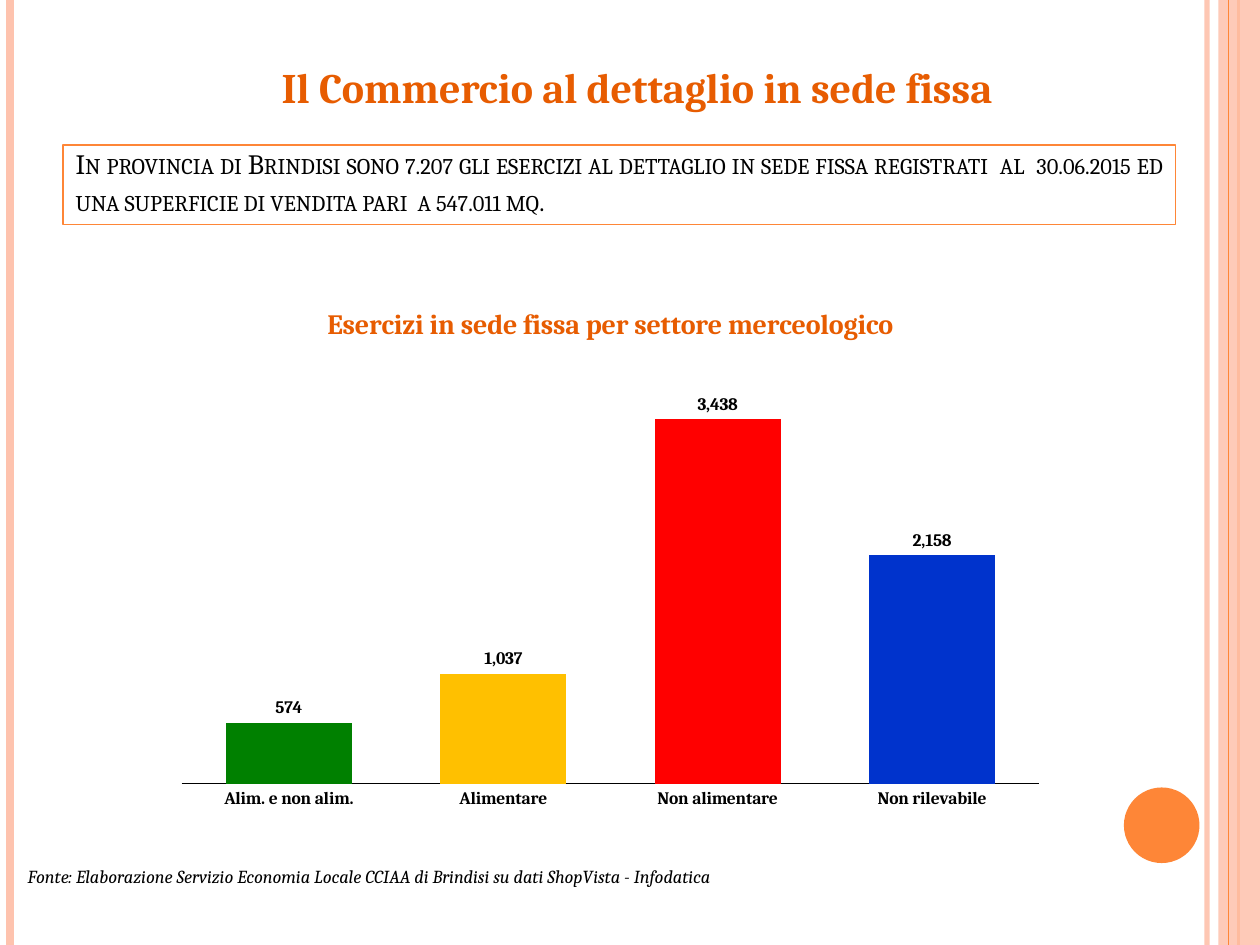
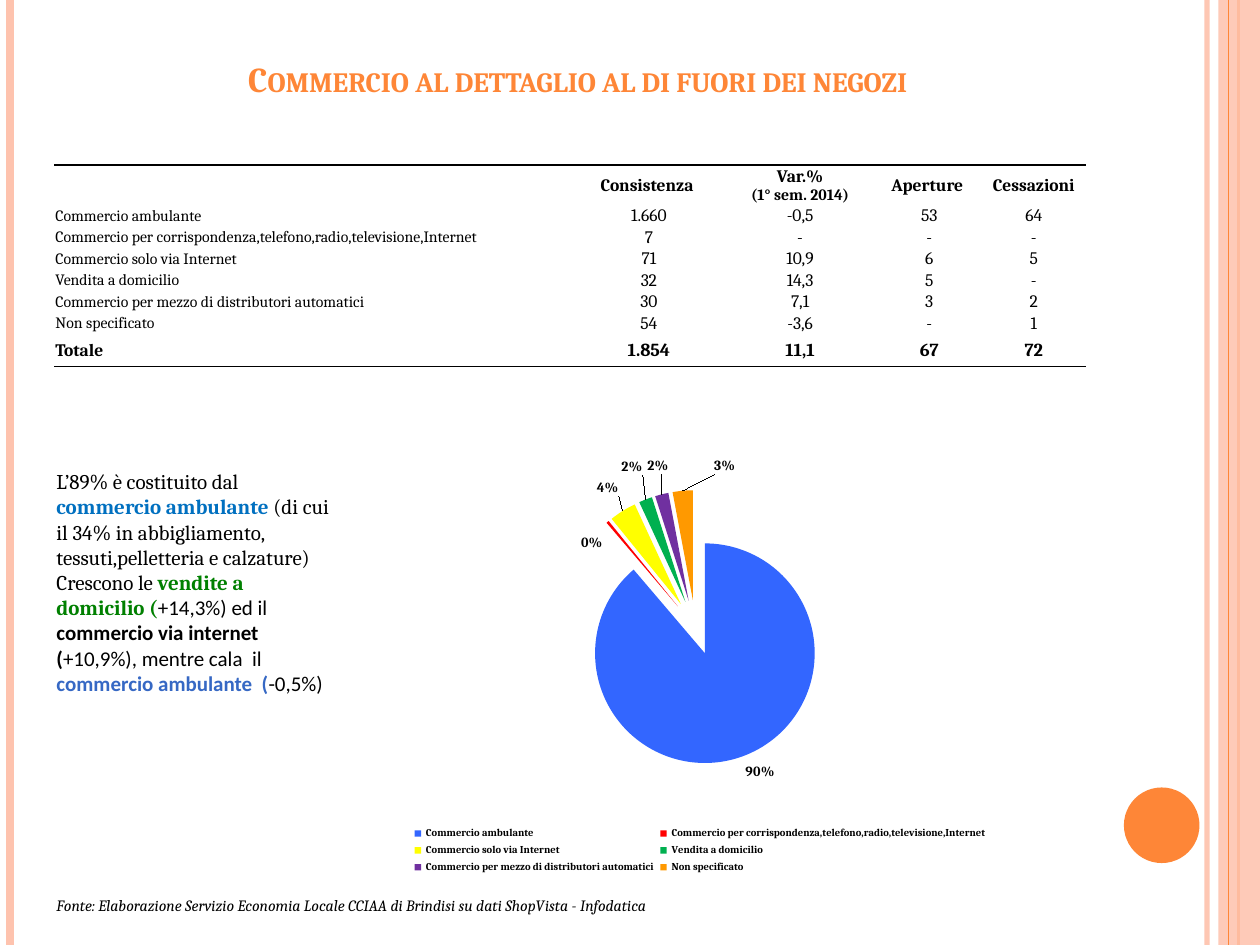
from lxml.etree import SubElement
from pptx import Presentation
from pptx.chart.data import CategoryChartData
from pptx.dml.color import RGBColor
from pptx.enum.chart import XL_CHART_TYPE as ChartType, XL_LABEL_POSITION as LabelPosition
from pptx.enum.chart import XL_LEGEND_POSITION as LegendPosition, XL_TICK_MARK as TickMark
from pptx.enum.shapes import MSO_CONNECTOR as Connector, MSO_SHAPE as Shape
from pptx.enum.text import MSO_ANCHOR as Anchor, MSO_AUTO_SIZE as AutoSize, PP_ALIGN as Align
from pptx.oxml import parse_xml
from pptx.oxml.ns import nsdecls, qn
from pptx.util import Pt

SCALE = 9144
WIDTH, HEIGHT = 1000, 750

BLACK = RGBColor(0x00, 0x00, 0x00)
ORANGE = RGBColor(0xFE, 0x86, 0x37)
DARK_ORANGE = RGBColor(0xE7, 0x5C, 0x01)
PINK = RGBColor(0xFE, 0xC3, 0xAE)
GREEN = RGBColor(0x00, 0x80, 0x00)
SKY = RGBColor(0x00, 0x70, 0xC0)
STEEL = RGBColor(0x36, 0x68, 0xC4)
RED = RGBColor(0xFF, 0x00, 0x00)
SECTOR_COLORS = [GREEN, RGBColor(0xFF, 0xC0, 0x00), RED, RGBColor(0x00, 0x33, 0xCC)]
CHANNEL_COLORS = [RGBColor(0x33, 0x66, 0xFF), RED, RGBColor(0xFF, 0xFF, 0x00),
                  RGBColor(0x00, 0xB0, 0x50), RGBColor(0x70, 0x30, 0xA0),
                  RGBColor(0xFF, 0x99, 0x00)]

SERIF, SANS = "Cambria", "Calibri"
PLAIN_TABLE_STYLE = "{2D5ABB26-0587-4C30-8999-92F81FD0307C}"
SOURCE = ("Fonte: Elaborazione Servizio Economia Locale CCIAA di Brindisi "
          "su dati ShopVista - Infodatica")
SECTOR_TITLE = "Esercizi in sede fissa per settore merceologico"
SECTORS = {"Alim. e non alim.": 574, "Alimentare": 1037,
           "Non alimentare": 3438, "Non rilevabile": 2158}
CHANNEL_ROWS = [
    ["", "Consistenza ", "Var.%\n(1° sem. 2014)", "Aperture ", "Cessazioni"],
    ["Commercio ambulante", "1.660", "-0,5", "53", "64"],
    ["Commercio per corrispondenza,telefono,radio,televisione,Internet", "7", "-", "-", "-"],
    ["Commercio solo via Internet", "71", "10,9", "6", "5"],
    ["Vendita a domicilio", "32", "14,3", "5", "-"],
    ["Commercio per mezzo di distributori automatici", "30", "7,1", "3", "2"],
    ["Non specificato", "54", "-3,6", "-", "1"],
    ["Totale", "1.854", "11,1", "67", "72"],
]
SHARES = [90, 0.4, 4, 2, 2, 3]
SHARE_FORMAT = '0"%"'
LABEL_SHIFTS = {1: (0, 0.08), 2: (0, -0.02), 3: (0, -0.04), 4: (0.01, -0.03), 5: (0.06, -0.02)}
COMMENTS = [
    [("L’89% è costituito dal ", {}),
     ("commercio ambulante ", {"color": SKY, "bold": True}),
     ("(di cui il 34% in abbigliamento, tessuti,pelletteria e calzature)", {})],
    [("Crescono le ", {}),
     ("vendite a domicilio (", {"color": GREEN, "bold": True}),
     ("+14,3%) ed il ", {"font": SANS}),
     ("commercio via internet (", {"font": SANS, "bold": True}),
     ("+10,9%), mentre cala  il ", {"font": SANS}),
     ("commercio ambulante  (", {"font": SANS, "color": STEEL, "bold": True}),
     ("-0,5%)", {"font": SANS})],
]


def px(*lengths):
    """Turn px lengths into a list of EMU."""
    return [length * SCALE for length in lengths]


def write(paragraph, text, size=12, color=BLACK, font=SERIF, bold=False,
          italic=False, small_caps=False, align=None):
    """Add a formatted run to a paragraph."""
    run = paragraph.add_run()
    run.text = text
    run.font.size, run.font.name = Pt(size), font
    run.font.bold, run.font.italic = bold, italic
    run.font.color.rgb = color
    if small_caps:
        run._r.get_or_add_rPr().set("cap", "small")
    if align is not None:
        paragraph.alignment = align


def add_text(slide, box):
    """Add a wrapping text box and return its text frame."""
    frame = slide.shapes.add_textbox(*px(*box)).text_frame
    frame.word_wrap = True
    return frame


def place_title(slide, box):
    """Place the title placeholder and return its shape and paragraph."""
    title = slide.shapes.title
    title.left, title.top, title.width, title.height = px(*box)
    frame = title.text_frame
    frame.vertical_anchor, frame.auto_size = Anchor.BOTTOM, AutoSize.NONE
    return title, frame.paragraphs[0]


def set_opacity(shape, percent):
    """Make the first colour of a shape partly transparent."""
    color = shape.element.xpath(".//a:srgbClr")[0]
    SubElement(color, qn("a:alpha"), val=str(percent * 1000))


def add_rule(slide, x, color, width):
    """Add a full-height vertical line."""
    line = slide.shapes.add_connector(Connector.STRAIGHT, *px(x, 0, x, HEIGHT))
    line.line.color.rgb, line.line.width = color, Pt(width)
    SubElement(line.element.spPr, qn("a:effectLst"))
    return line


def add_solid(slide, kind, box, color):
    """Add a filled shape without outline."""
    shape = slide.shapes.add_shape(kind, *px(*box))
    shape.shadow.inherit = False
    shape.fill.solid()
    shape.fill.fore_color.rgb = color
    shape.line.fill.background()
    return shape


def decorate_master(master, slide):
    """Build the side bands and the disc, and hand them to the master."""
    parts = [add_rule(slide, 958, PINK, 3), add_rule(slide, 8, PINK, 4.5),
             add_rule(slide, 983, ORANGE, 1.5),
             add_solid(slide, Shape.RECTANGLE, (967, 0, 33, HEIGHT), PINK),
             add_rule(slide, 975, ORANGE, 0.75),
             add_solid(slide, Shape.OVAL, (892, 625, 60, 60), ORANGE)]
    set_opacity(parts[0], 93)
    set_opacity(parts[3], 87)
    for number, part in enumerate(parts, 100):
        part.element.xpath("./*/p:cNvPr")[0].set("id", str(number))
        master.shapes.element.append(part.element)


def add_chart(slide, kind, box, name, categories, values, colors):
    """Add a one-series chart with a colour for each point."""
    data = CategoryChartData(number_format="#,##0")
    data.categories = categories
    data.add_series(name, values)
    chart = slide.shapes.add_chart(kind, *px(*box), data).chart
    chart.font.size, chart.font.name = Pt(10), SERIF
    chart.font.color.rgb = BLACK
    chart.has_legend = chart.has_title = False
    series = chart.plots[0].series[0]
    for index, color in enumerate(colors):
        fill = series.points[index].format.fill
        fill.solid()
        fill.fore_color.rgb = color
    return chart, series


def format_labels(labels, size):
    """Show bold labels outside the end of their points."""
    labels.position = LabelPosition.OUTSIDE_END
    labels.font.size, labels.font.bold, labels.font.name = Pt(size), True, SERIF


def show_values(series, size, number_format):
    """Show the values of a series in a number format."""
    labels = series.data_labels
    labels.show_value = True
    labels.number_format, labels.number_format_is_linked = number_format, False
    format_labels(labels, size)


def insert_layout(parent, index, **values):
    """Insert a manual chart layout into a chart element."""
    for old in parent.findall(qn("c:layout")):
        parent.remove(old)
    fields = "".join(f'<c:{key} val="{value}"/>' for key, value in values.items())
    parent.insert(index, parse_xml(f'<c:layout {nsdecls("c")}><c:manualLayout>{fields}'
                                   "</c:manualLayout></c:layout>"))


def add_sector_chart(slide, box):
    """Add the column chart of shops by sector."""
    chart, series = add_chart(slide, ChartType.COLUMN_CLUSTERED, box, SECTOR_TITLE,
                              SECTORS.keys(), SECTORS.values(), SECTOR_COLORS)
    chart.has_title = True
    write(chart.chart_title.text_frame.paragraphs[0], SECTOR_TITLE,
          size=16, color=DARK_ORANGE, bold=True)
    chart.plots[0].gap_width = 70
    chart.plots[0].vary_by_categories = False
    series.format.fill.solid()
    series.format.fill.fore_color.rgb = ORANGE
    show_values(series, 10, "#,##0")
    chart.value_axis.visible = chart.value_axis.has_major_gridlines = False
    axis = chart.category_axis
    axis.major_tick_mark = TickMark.NONE
    axis.tick_labels.font.bold = True
    axis.format.line.color.rgb, axis.format.line.width = BLACK, Pt(1)


def add_share_chart(slide, box):
    """Add the exploded pie of shares by sales channel."""
    first, *others = [row[0] for row in CHANNEL_ROWS[1:-1]]
    chart, series = add_chart(slide, ChartType.PIE, box, "Series 1",
                              [first + " ", *others], SHARES, CHANNEL_COLORS)
    chart.has_legend = True
    chart.legend.position = LegendPosition.BOTTOM
    chart.legend.include_in_layout = False
    chart.legend.font.size, chart.legend.font.bold = Pt(6), True
    show_values(series, 8, SHARE_FORMAT)
    for index in LABEL_SHIFTS:
        format_labels(series.points[index].data_label, 8)
    for label, (x, y) in zip(chart.element.xpath("//c:dLbl"), LABEL_SHIFTS.values()):
        insert_layout(label, 1, x=x, y=y)
        number = parse_xml(f'<c:numFmt {nsdecls("c")} sourceLinked="0"/>')
        number.set("formatCode", SHARE_FORMAT)
        label.insert(2, number)
    chart.element.xpath("//c:dPt")[0].addprevious(
        parse_xml(f'<c:explosion {nsdecls("c")} val="25"/>'))
    insert_layout(chart.element.xpath("//c:plotArea")[0], 0, layoutTarget="inner",
                  xMode="edge", yMode="edge", x=0.08, y=0.11, w=0.83, h=0.63)


def add_plain_table(slide, left, top, widths, heights):
    """Add a table without fills or grid."""
    frame = slide.shapes.add_table(len(heights), len(widths),
                                   *px(left, top, sum(widths), sum(heights)))
    frame.element.xpath(".//a:tableStyleId")[0].text = PLAIN_TABLE_STYLE
    table = frame.table
    table.first_row = table.horz_banding = False
    for column, width in zip(table.columns, widths):
        column.width = width * SCALE
    for row, height in zip(table.rows, heights):
        row.height = height * SCALE
        for cell in row.cells:
            cell.fill.background()
    return table


def add_border(cell, side):
    """Draw a black line on one side of a table cell."""
    cell._tc.get_or_add_tcPr().insert(0, parse_xml(
        f'<a:{side} {nsdecls("a")} w="12700"><a:solidFill>'
        f'<a:srgbClr val="{BLACK}"/></a:solidFill></a:{side}>'))


def fill_cell(cell, text, sizes, bold, align):
    """Write one table cell, a paragraph for each line of its text."""
    cell.vertical_anchor = Anchor.MIDDLE
    cell.margin_left, cell.margin_top, cell.margin_right, cell.margin_bottom = px(1, 1, 1, 0)
    frame = cell.text_frame
    for index, line in enumerate(text.splitlines()):
        paragraph = frame.add_paragraph() if index else frame.paragraphs[0]
        write(paragraph, line, size=sizes[index], bold=bold, align=align)


def add_channel_table(slide, left, top):
    """Add the table of sales channels."""
    last = len(CHANNEL_ROWS) - 1
    table = add_plain_table(slide, left, top, [413, 118, 122, 83, 83],
                            [28] + [16] * (last - 1) + [26])
    for r, texts in enumerate(CHANNEL_ROWS):
        for c, text in enumerate(texts):
            cell = table.cell(r, c)
            size = (10.5 if r == last else 10) if c else 10 if r == last else 9
            fill_cell(cell, text, (size, 9), r in (0, last), Align.CENTER if c else Align.LEFT)
            if r in (0, last):
                add_border(cell, "lnB" if r else "lnT")


def add_comments(slide, box):
    """Add the commentary with its highlighted words."""
    frame = add_text(slide, box)
    for index, spans in enumerate(COMMENTS):
        paragraph = frame.add_paragraph() if index else frame.paragraphs[0]
        for text, style in spans:
            write(paragraph, text, **style)


def build_fixed_shops(slide):
    """Build the slide on shops with fixed premises."""
    title, paragraph = place_title(slide, (50, 115, 883, 63))
    title.line.color.rgb, title.line.width = ORANGE, Pt(0.75)
    write(paragraph, "In provincia di Brindisi sono 7.207 gli esercizi al dettaglio "
          "in sede fissa registrati  al  30.06.2015 ed una superficie di vendita "
          "pari  a 547.011 mq", size=16, small_caps=True, align=Align.JUSTIFY)
    write(paragraph, ". ", size=18, small_caps=True)
    add_sector_chart(slide, (130, 225, 709, 425))
    write(add_text(slide, (12, 682, 945, 28)).paragraphs[0], SOURCE, size=10.5, italic=True)
    write(add_text(slide, (161, 44, 689, 50)).paragraphs[0],
          "Il Commercio al dettaglio in sede fissa", size=24, color=DARK_ORANGE,
          bold=True, align=Align.CENTER)


def build_other_channels(slide):
    """Build the slide on retail outside shops."""
    _, paragraph = place_title(slide, (50, 30, 817, 54))
    write(paragraph, "Commercio al dettaglio al di fuori dei negozi", size=20,
          color=ORANGE, bold=True, small_caps=True, align=Align.CENTER)
    add_channel_table(slide, 43, 131)
    add_plain_table(slide, 175, 336, [656], [40])
    add_share_chart(slide, (201, 351, 709, 346))
    add_comments(slide, (35, 367, 236, 192))
    write(add_text(slide, (35, 706, 850, 25)).paragraphs[0], SOURCE, size=9, italic=True)


def main():
    """Build and save the presentation."""
    presentation = Presentation()
    presentation.slide_width, presentation.slide_height = px(WIDTH, HEIGHT)
    layout = presentation.slide_layouts[5]
    shops, channels = [presentation.slides.add_slide(layout) for _ in range(2)]
    decorate_master(presentation.slide_master, shops)
    build_fixed_shops(shops)
    build_other_channels(channels)
    presentation.save("out.pptx")


if __name__ == "__main__":
    main()
